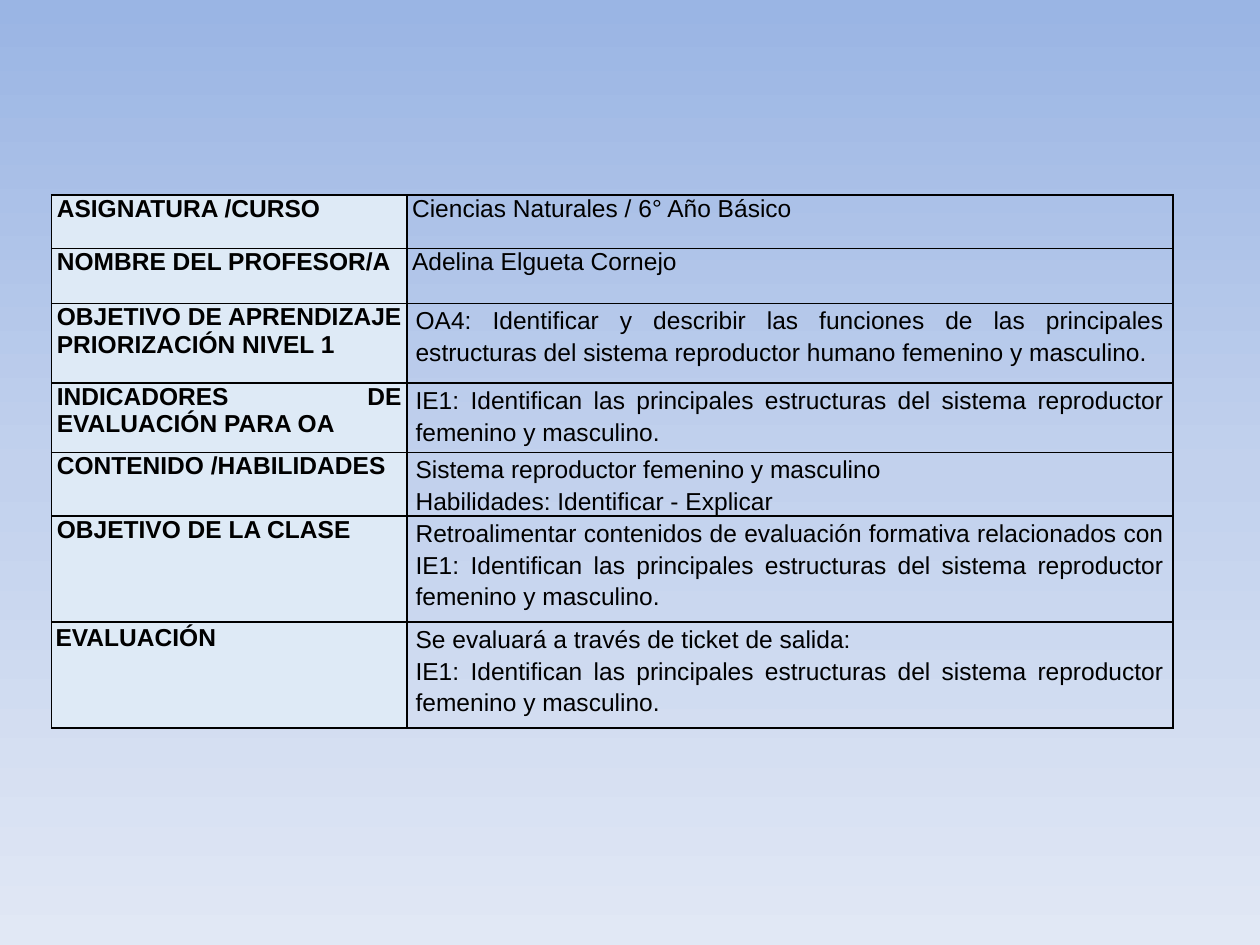
from copy import deepcopy
from dataclasses import dataclass

from lxml.etree import SubElement
from pptx import Presentation
from pptx.dml.color import RGBColor
from pptx.enum.text import PP_ALIGN
from pptx.oxml.ns import qn
from pptx.util import Pt


@dataclass(frozen=True)
class Theme:
    font: str = "Arial"
    size: float = 14
    text: str = "000000"
    border: str = "000000"
    border_width: float = 1
    label_fill: str = "DEEAF6"
    gradient: tuple = ((0, "9AB5E4"), (0.5, "C2D1ED"), (1, "E1E8F5"))


@dataclass(frozen=True)
class Row:
    label: str
    detail: str
    height: float
    detail_inset: float = 5
    spacing: float = 1.15
    label_inset: float = 3
    label_top: float = 0


THEME = Theme()
LEFT, TOP = 29.5, 111.5
COLUMNS = (203, 437.75)
INDICATOR = ("IE1: Identifican las principales estructuras del sistema "
             "reproductor femenino y masculino.")
ROWS = (
    Row("ASIGNATURA /CURSO", "Ciencias Naturales / 6° Año Básico", 30.5, 3, 1),
    Row("NOMBRE DEL PROFESOR/A", "Adelina Elgueta Cornejo", 31.5, 3, 1),
    Row("OBJETIVO DE APRENDIZAJE PRIORIZACIÓN NIVEL 1",
        "OA4: Identificar y describir las funciones de las principales "
        "estructuras del sistema reproductor humano femenino y masculino.", 45.5),
    Row("INDICADORES DE EVALUACIÓN PARA OA", INDICATOR, 39.5),
    Row("CONTENIDO /HABILIDADES",
        "Sistema reproductor femenino y masculino\n"
        "Habilidades: Identificar - Explicar", 36.5),
    Row("OBJETIVO DE LA CLASE",
        "Retroalimentar contenidos de evaluación formativa relacionados con "
        + INDICATOR, 60.5),
    Row("EVALUACIÓN", "Se evaluará a través de ticket de salida:\n" + INDICATOR,
        60.5, label_inset=2.25, label_top=1.25),
)


def paint_background(s) -> None:
    fill = s.background.fill
    fill.gradient()
    fill.gradient_angle = 270
    stops = s.element.find(".//" + qn("a:gsLst"))
    stops.insert(1, deepcopy(stops[0]))
    for stop, (position, color) in zip(fill.gradient_stops, THEME.gradient):
        stop.position = position
        stop.color.rgb = RGBColor.from_string(color)


def add_borders(cell) -> None:
    tc_pr = cell._tc.get_or_add_tcPr()
    for side in ("a:lnL", "a:lnR", "a:lnT", "a:lnB"):
        ln = SubElement(tc_pr, qn(side), w=str(Pt(THEME.border_width)))
        fill = SubElement(ln, qn("a:solidFill"))
        SubElement(fill, qn("a:srgbClr"), val=THEME.border)


def fill_cell(cell, text: str, inset: float, top: float = 0,
              spacing: float = 1, bold: bool = False) -> None:
    add_borders(cell)
    if bold:
        cell.fill.solid()
        cell.fill.fore_color.rgb = RGBColor.from_string(THEME.label_fill)
    else:
        cell.fill.background()
    cell.margin_left = cell.margin_right = Pt(inset)
    cell.margin_top = cell.margin_bottom = Pt(top)
    tf = cell.text_frame
    tf.text = text
    for p in tf.paragraphs:
        p.alignment = PP_ALIGN.JUSTIFY
        p.line_spacing = spacing
        for r in p.runs:
            r.font.name = THEME.font
            r.font.size = Pt(THEME.size)
            r.font.bold = bold
            r.font.color.rgb = RGBColor.from_string(THEME.text)


def add_lesson_table(s, rows: tuple[Row, ...]) -> None:
    height = sum(row.height for row in rows)
    table = s.shapes.add_table(len(rows), len(COLUMNS), Pt(LEFT), Pt(TOP),
                               Pt(sum(COLUMNS)), Pt(height)).table
    table.first_row = table.horz_banding = False
    for column, width in zip(table.columns, COLUMNS):
        column.width = Pt(width)
    for i, row in enumerate(rows):
        table.rows[i].height = Pt(row.height)
        fill_cell(table.cell(i, 0), row.label, row.label_inset, row.label_top,
                  bold=True)
        fill_cell(table.cell(i, 1), row.detail, row.detail_inset,
                  spacing=row.spacing)


def main() -> None:
    prs = Presentation()
    prs.slide_width, prs.slide_height = Pt(720), Pt(540)
    s = prs.slides.add_slide(prs.slide_layouts[6])
    paint_background(s)
    add_lesson_table(s, ROWS)
    prs.save("out.pptx")


if __name__ == "__main__":
    main()
